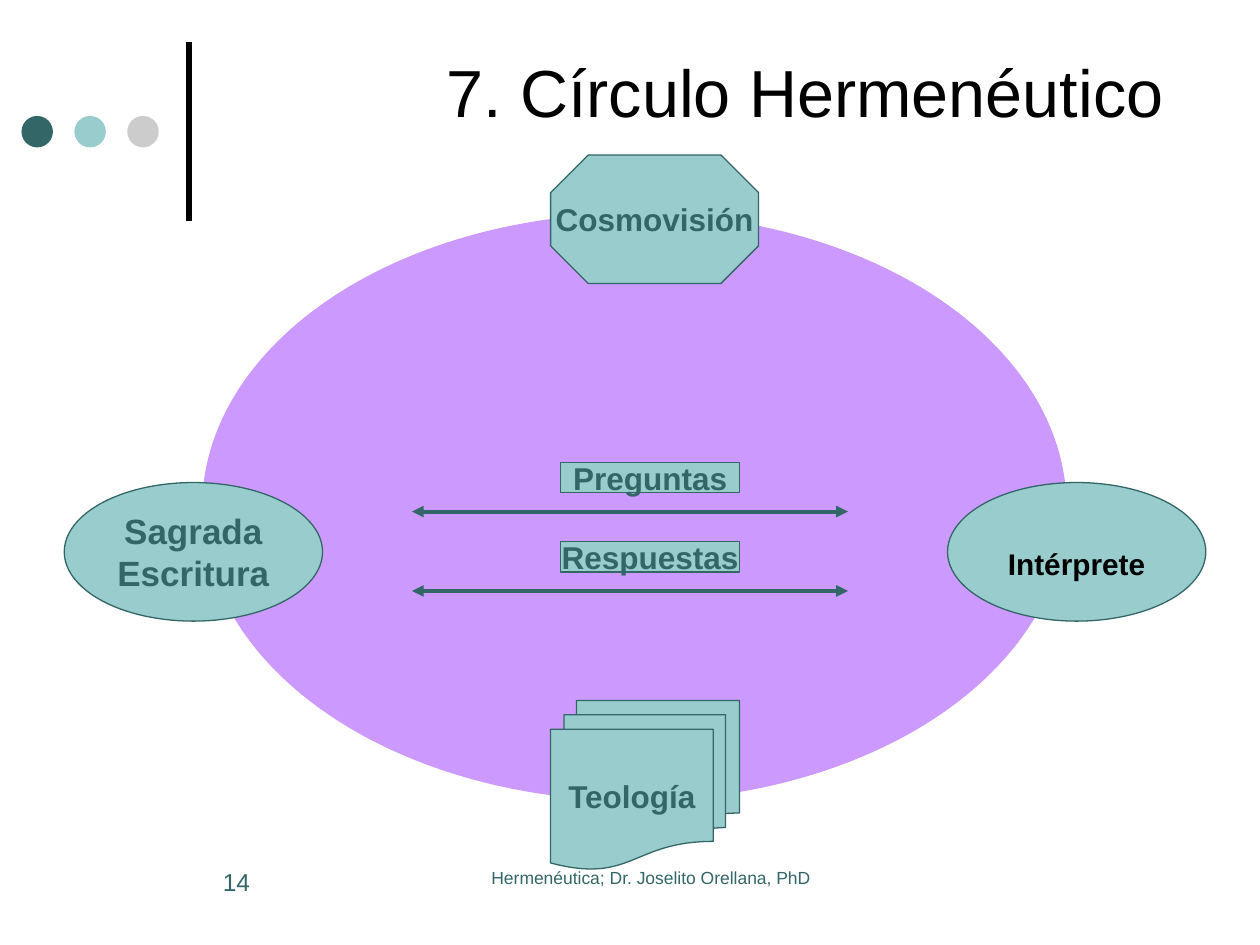
from lxml import etree
from pptx import Presentation
from pptx.dml.color import RGBColor
from pptx.enum import shapes, text
from pptx.oxml import ns
from pptx.util import Inches, Pt

TEAL = RGBColor(0x33, 0x66, 0x66)
AQUA = RGBColor(0x99, 0xCC, 0xCC)
GREY = RGBColor(0xCC, 0xCC, 0xCC)
LILAC = RGBColor(0xCC, 0x99, 0xFF)
BLACK = RGBColor(0, 0, 0)
MSO = shapes.MSO_SHAPE
ALIGN = text.PP_ALIGN
MIDDLE, TOP = text.MSO_ANCHOR.MIDDLE, text.MSO_ANCHOR.TOP

prs = Presentation()
prs.slide_width, prs.slide_height = Inches(10), Inches(7.5)
slide = prs.slides.add_slide(prs.slide_layouts[1])
tree = slide.shapes


def write(sp, words, size, color=TEAL, bold=True, align=ALIGN.CENTER,
          anchor=MIDDLE, wrap=False):
    tf = sp.text_frame
    tf.text = words
    tf.word_wrap, tf.vertical_anchor = wrap, anchor
    tf.auto_size = text.MSO_AUTO_SIZE.NONE
    look = {"name": "Arial", "size": Pt(size), "bold": bold}
    for p in tf.paragraphs:
        p.alignment = align
        for r in p.runs:
            for key, value in look.items():
                setattr(r.font, key, value)
            r.font.color.rgb = color


def add_figure(kind, box, fill, line=None):
    sp = tree.add_shape(kind, *map(Inches, box))
    sp.shadow.inherit = False
    sp.fill.solid()
    sp.fill.fore_color.rgb = fill
    if line is None:
        sp.line.fill.background()
    else:
        sp.line.color.rgb = line
        sp.line.width = Pt(0.75)
    return sp


# Title and template dots
title = tree.title
body = slide.placeholders[1]
for sp, box in ((title, (1.67, 0.21, 7.67, 1.03)), (body, (7.52, 3.83, 2.05, 1.1))):
    sp.left, sp.top, sp.width, sp.height = map(Inches, box)
write(title, "7. Círculo Hermenéutico", 38, BLACK, False, ALIGN.RIGHT, wrap=True)

for i, color in enumerate((TEAL, AQUA, GREY)):
    add_figure(MSO.OVAL, (0.17 + 0.42 * i, 0.92, 0.25, 0.25), color)

# Footer and page number
for words, size, align, left, width in (
        ("Hermenéutica; Dr. Joselito Orellana, PhD", 10, ALIGN.CENTER, 3.58, 3.17),
        ("14", 14, ALIGN.LEFT, 1.67, 1.42)):
    box = tree.add_textbox(Inches(left), Inches(6.83), Inches(width), Inches(0.5))
    write(box, words, size, TEAL, False, align, TOP, True)

# Circle and its stations
add_figure(MSO.OVAL, (1.61, 1.7, 6.85, 4.65), LILAC, LILAC)
for kind, box, words, size in (
        (MSO.OVAL, (0.51, 3.83, 2.05, 1.1), "Sagrada\nEscritura", 20),
        (MSO.FLOWCHART_MULTIDOCUMENT, (4.37, 5.56, 1.5, 1.34), "Teología", 18),
        (MSO.OCTAGON, (4.37, 1.23, 1.65, 1.02), "Cosmovisión", 18),
        (MSO.RECTANGLE, (4.45, 3.67, 1.42, 0.24), "Preguntas", 18),
        (MSO.RECTANGLE, (4.45, 4.3, 1.42, 0.24), "Respuestas", 18)):
    write(add_figure(kind, box, AQUA, TEAL), words, size)

# The interpreter is the body placeholder, shaped as an ellipse
geom = etree.SubElement(body.element.spPr, ns.qn("a:prstGeom"), prst="ellipse")
etree.SubElement(geom, ns.qn("a:avLst"))
body.fill.solid()
body.fill.fore_color.rgb = AQUA
body.line.color.rgb = TEAL
body.line.width = Pt(0.75)
write(body, "Intérprete", 17, BLACK, wrap=True)
body.text_frame.margin_top = Inches(0.23)
pPr = body.text_frame.paragraphs[0]._p.get_or_add_pPr()
pPr.set("marL", "0")
pPr.set("indent", "0")
etree.SubElement(pPr, ns.qn("a:buNone"))
body.element.getparent().append(body.element)

# Vertical rule and the two double arrows
for x1, y1, x2, y2, color, width, arrows in (
        (1.5, 1.75, 1.5, 0.33, BLACK, 3, ()),
        (3.27, 4.06, 6.73, 4.06, TEAL, 2.25, ("a:headEnd", "a:tailEnd")),
        (3.27, 4.69, 6.73, 4.69, TEAL, 2.25, ("a:headEnd", "a:tailEnd"))):
    line = tree.add_connector(shapes.MSO_CONNECTOR.STRAIGHT,
                              *map(Inches, (x1, y1, x2, y2)))
    line.line.color.rgb = color
    line.line.width = Pt(width)
    for end in arrows:
        etree.SubElement(line.line._get_or_add_ln(), ns.qn(end), type="triangle")
    etree.SubElement(line._element.spPr, ns.qn("a:effectLst"))

prs.save("out.pptx")
